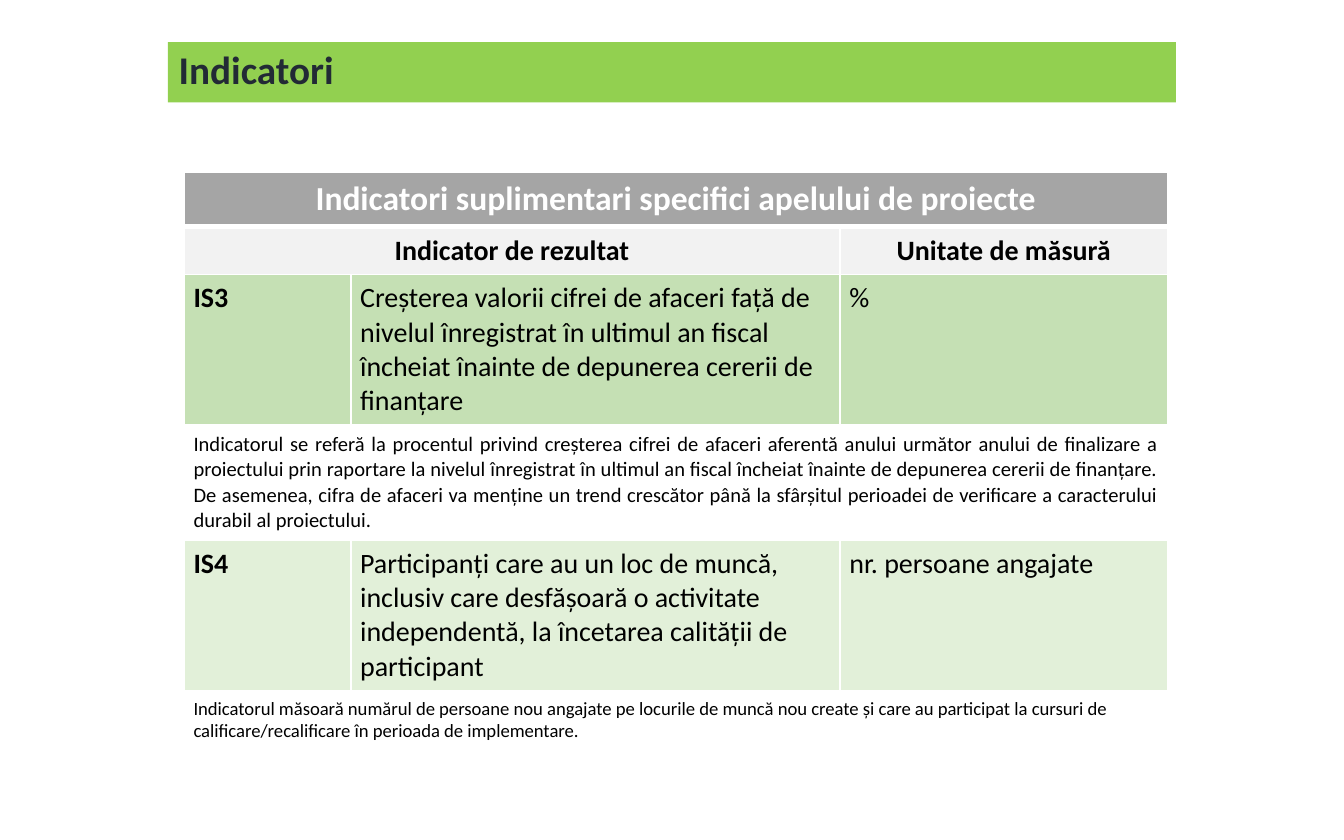
from dataclasses import dataclass

from lxml import etree
from pptx import Presentation
from pptx import util as u
from pptx.dml.color import RGBColor
from pptx.enum import shapes, text
from pptx.oxml import ns


@dataclass(frozen=True)
class Theme:
    font: str = "Calibri"
    banner: str = "92D050"
    banner_ink: str = "222A35"
    heading: str = "A5A5A5"
    subheading: str = "F2F2F2"
    first: str = "C5E0B4"
    second: str = "E2F0D9"
    ink: str = "000000"
    white: str = "FFFFFF"
    title_size: float = 21
    heading_size: float = 18
    body_size: float = 15
    note_size: float = 11
    small_size: float = 10
    rule: float = 0.96
    thick_rule: float = 3


THEME = Theme()
LEFT, CENTER, JUSTIFY = (text.PP_ALIGN.LEFT, text.PP_ALIGN.CENTER,
                         text.PP_ALIGN.JUSTIFY)


def write(frame, words, *, size, color=THEME.ink, bold=False, align=LEFT, spacing=None):
    paragraph = frame.paragraphs[0]
    paragraph.alignment = align
    if spacing:
        paragraph.line_spacing = spacing
    run = paragraph.add_run()
    run.text = words
    run.font.name = THEME.font
    run.font.size = u.Pt(size)
    run.font.bold = bold
    run.font.color.rgb = RGBColor.from_string(color)


class SlideBuilder:
    def __init__(self, presentation, theme):
        self.theme = theme
        self.width = presentation.slide_width
        self.height = presentation.slide_height
        self.slide = presentation.slides.add_slide(presentation.slide_layouts[6])

    def box(self, left, top, width, height):
        """Turn shares of the slide's size into lengths."""
        return (int(self.width * left), int(self.height * top),
                int(self.width * width), int(self.height * height))

    def banner(self, words, *place):
        bar = self.slide.shapes.add_shape(shapes.MSO_SHAPE.RECTANGLE, *self.box(*place))
        bar.shadow.inherit = False
        bar.fill.solid()
        bar.fill.fore_color.rgb = RGBColor.from_string(self.theme.banner)
        bar.line.fill.background()
        frame = bar.text_frame
        frame.word_wrap = True
        frame.vertical_anchor = text.MSO_ANCHOR.MIDDLE
        frame.margin_left = frame.margin_right = u.Inches(0.08)
        frame.margin_top = frame.margin_bottom = u.Inches(0.04)
        write(frame, words, size=self.theme.title_size, color=self.theme.banner_ink,
              bold=True, spacing=0.9)

    def table(self, rows, columns, heights, left, top):
        """Fill a table from rows of (words, span, fill, format) cells."""
        place = self.box(left, top, sum(columns), sum(heights))
        grid = self.slide.shapes.add_table(len(rows), len(columns), *place).table
        grid.first_row = grid.horz_banding = False
        for column, share in zip(grid.columns, columns):
            column.width = int(self.width * share)
        for row, share in zip(grid.rows, heights):
            row.height = int(self.height * share)
        for r, cells in enumerate(rows):
            c = 0
            for words, span, fill, style in cells:
                cell = grid.cell(r, c)
                if span > 1:
                    cell.merge(grid.cell(r, c + span - 1))
                write(cell.text_frame, words, **style)
                for part in range(c, c + span):
                    self.finish_cell(grid.cell(r, part), fill, r)
                c += span

    def finish_cell(self, cell, fill, row):
        cell.margin_left = cell.margin_right = u.Inches(0.07)
        cell.margin_top = cell.margin_bottom = u.Inches(0.05)
        if fill:
            cell.fill.solid()
            cell.fill.fore_color.rgb = RGBColor.from_string(fill)
        else:
            cell.fill.background()
        thick_sides = {0: "B", 1: "T"}
        properties = cell._tc.get_or_add_tcPr()
        for index, side in enumerate("LRTB"):
            thick = thick_sides.get(row) == side
            weight = self.theme.thick_rule if thick else self.theme.rule
            line = etree.Element(ns.qn(f"a:ln{side}"), w=str(u.Pt(weight)))
            solid = etree.SubElement(line, ns.qn("a:solidFill"))
            etree.SubElement(solid, ns.qn("a:srgbClr"), val=self.theme.white)
            properties.insert(index, line)


def indicator_row(code, meaning, unit, fill):
    body = dict(size=THEME.body_size)
    return [(code, 1, fill, body | dict(bold=True)),
            (meaning, 1, fill, body), (unit, 1, fill, body)]


def main():
    presentation = Presentation()
    presentation.slide_width, presentation.slide_height = u.Inches(10), u.Inches(6.25)
    page = SlideBuilder(presentation, THEME)
    page.banner("Indicatori", 1 / 8, 0.05, 3 / 4, 0.072)

    heading = dict(size=THEME.heading_size, color=THEME.white, bold=True, align=CENTER)
    subheading = dict(size=THEME.body_size, bold=True, align=CENTER)
    indicators = [
        [("Indicatori suplimentari specifici apelului de proiecte", 3,
          THEME.heading, heading)],
        [("Indicator de rezultat", 2, THEME.subheading, subheading),
         ("Unitate de măsură", 1, THEME.subheading, subheading)],
        indicator_row(
            "IS3",
            "Creșterea valorii cifrei de afaceri față de nivelul înregistrat în ultimul "
            "an fiscal încheiat înainte de depunerea cererii de finanțare",
            "%", THEME.first),
        [("Indicatorul se referă la procentul privind creșterea cifrei de afaceri "
          "aferentă anului următor anului de finalizare a proiectului prin raportare la "
          "nivelul înregistrat în ultimul an fiscal încheiat înainte de depunerea "
          "cererii de finanțare. De asemenea, cifra de afaceri va menține un trend "
          "crescător până la sfârșitul perioadei de verificare a caracterului durabil "
          "al proiectului.", 3, None, dict(size=THEME.note_size, align=JUSTIFY))],
        indicator_row(
            "IS4",
            "Participanți care au un loc de muncă, inclusiv care desfășoară o activitate "
            "independentă, la încetarea calității de participant",
            "nr. persoane angajate", THEME.second),
        [("Indicatorul măsoară numărul de persoane nou angajate pe locurile de muncă nou "
          "create și care au participat la cursuri de calificare/recalificare în "
          "perioada de implementare.", 3, None, dict(size=THEME.small_size))],
    ]
    columns = [width / 10 for width in (1.24, 3.64, 2.44)]
    heights = [height / 6.25 for height in (0.37, 0.32, 1.07, 0.77, 1.07, 0.41)]
    page.table(indicators, columns, heights, 0.137, 0.205)
    presentation.save("out.pptx")


if __name__ == "__main__":
    main()
